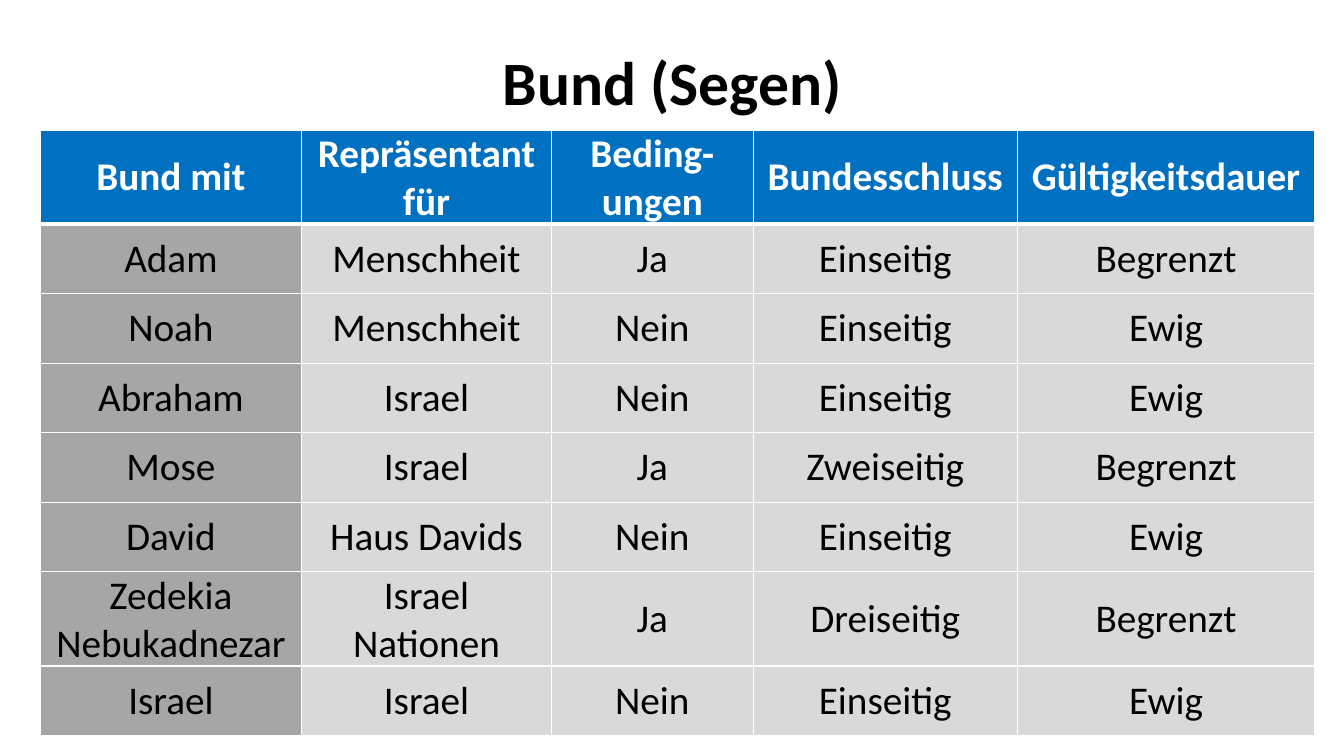
from lxml import etree
from pptx import Presentation
from pptx.dml.color import RGBColor
from pptx.enum.text import MSO_ANCHOR, PP_ALIGN
from pptx.oxml.ns import qn
from pptx.util import Inches, Pt

TITLE = "Bund (Segen)"
HEADER = ["Bund mit", "Repräsentant für", "Beding-\nungen", "Bundesschluss", "Gültigkeitsdauer"]
COVENANTS = [
    ["Adam", "Menschheit", "Ja", "Einseitig", "Begrenzt"],
    ["Noah", "Menschheit", "Nein", "Einseitig", "Ewig"],
    ["Abraham", "Israel", "Nein", "Einseitig", "Ewig"],
    ["Mose", "Israel", "Ja", "Zweiseitig", "Begrenzt"],
    ["David", "Haus Davids", "Nein", "Einseitig", "Ewig"],
    ["Zedekia\vNebukadnezar", "Israel\vNationen", "Ja", "Dreiseitig", "Begrenzt"],
    ["Israel", "Israel", "Nein", "Einseitig", "Ewig"],
]
COLUMN_WIDTHS = [2.59, 2.48, 2, 2.62, 2.95]
HEADER_HEIGHT, COVENANT_HEIGHT = 0.47, 0.69
TABLE_BOX = (0.4, 1.29, 12.65, 5.99)
TITLE_BOX = (0.92, 0.4, 11.5, 0.89)

THEME = {
    "font": "Calibri",
    "title_size": 44,
    "cell_size": 28,
    "text": "000000",
    "header_text": "FFFFFF",
    "header_fill": "0070C0",
    "partner_fill": "A6A6A6",
    "detail_fill": "D9D9D9",
    "border": "FFFFFF",
    "border_width": 1,
    "header_rule_width": 3,
}


def style_text(frame, size, color, bold):
    frame.vertical_anchor = MSO_ANCHOR.MIDDLE
    for paragraph in frame.paragraphs:
        paragraph.alignment = PP_ALIGN.CENTER
        font = paragraph.font
        font.name, font.size, font.bold = THEME["font"], Pt(size), bold
        font.color.rgb = RGBColor.from_string(color)


def add_borders(cell, top, bottom):
    properties = cell._tc.get_or_add_tcPr()
    side = THEME["border_width"]
    widths = [("a:lnL", side), ("a:lnR", side), ("a:lnT", top), ("a:lnB", bottom)]
    for position, (tag, width) in enumerate(widths):
        line = etree.Element(qn(tag), w=str(Pt(width)))
        fill = etree.SubElement(line, qn("a:solidFill"))
        etree.SubElement(fill, qn("a:srgbClr"), val=THEME["border"])
        properties.insert(position, line)


def fill_cell(cell, text, row, column):
    is_header = row == 0
    cell.text = text
    cell.margin_left = cell.margin_right = Inches(0.14)
    cell.margin_top = cell.margin_bottom = 0
    cell.vertical_anchor = MSO_ANCHOR.MIDDLE
    color = THEME["header_text" if is_header else "text"]
    style_text(cell.text_frame, THEME["cell_size"], color, is_header)
    role = "header_fill" if is_header else "detail_fill" if column else "partner_fill"
    cell.fill.solid()
    cell.fill.fore_color.rgb = RGBColor.from_string(THEME[role])
    thin, thick = THEME["border_width"], THEME["header_rule_width"]
    add_borders(cell, thick if row == 1 else thin, thick if is_header else thin)


def add_title(slide):
    title = slide.shapes.add_textbox(*map(Inches, TITLE_BOX)).text_frame
    title.word_wrap = True
    title.text = TITLE
    style_text(title, THEME["title_size"], THEME["text"], True)
    title.paragraphs[0].line_spacing = 0.9


def add_covenants(slide):
    rows = [HEADER, *COVENANTS]
    frame = slide.shapes.add_table(len(rows), len(HEADER), *map(Inches, TABLE_BOX))
    covenants = frame.table
    covenants.horz_banding = False
    for column, width in zip(covenants.columns, COLUMN_WIDTHS):
        column.width = Inches(width)
    for row, texts in enumerate(rows):
        covenants.rows[row].height = Inches(COVENANT_HEIGHT if row else HEADER_HEIGHT)
        for column, text in enumerate(texts):
            fill_cell(covenants.cell(row, column), text, row, column)
    frame.height = Inches(TABLE_BOX[3])


def main():
    deck = Presentation()
    deck.slide_width, deck.slide_height = Inches(13.33), Inches(7.5)
    slide = deck.slides.add_slide(deck.slide_layouts[6])
    add_title(slide)
    add_covenants(slide)
    deck.save("out.pptx")


if __name__ == "__main__":
    main()
